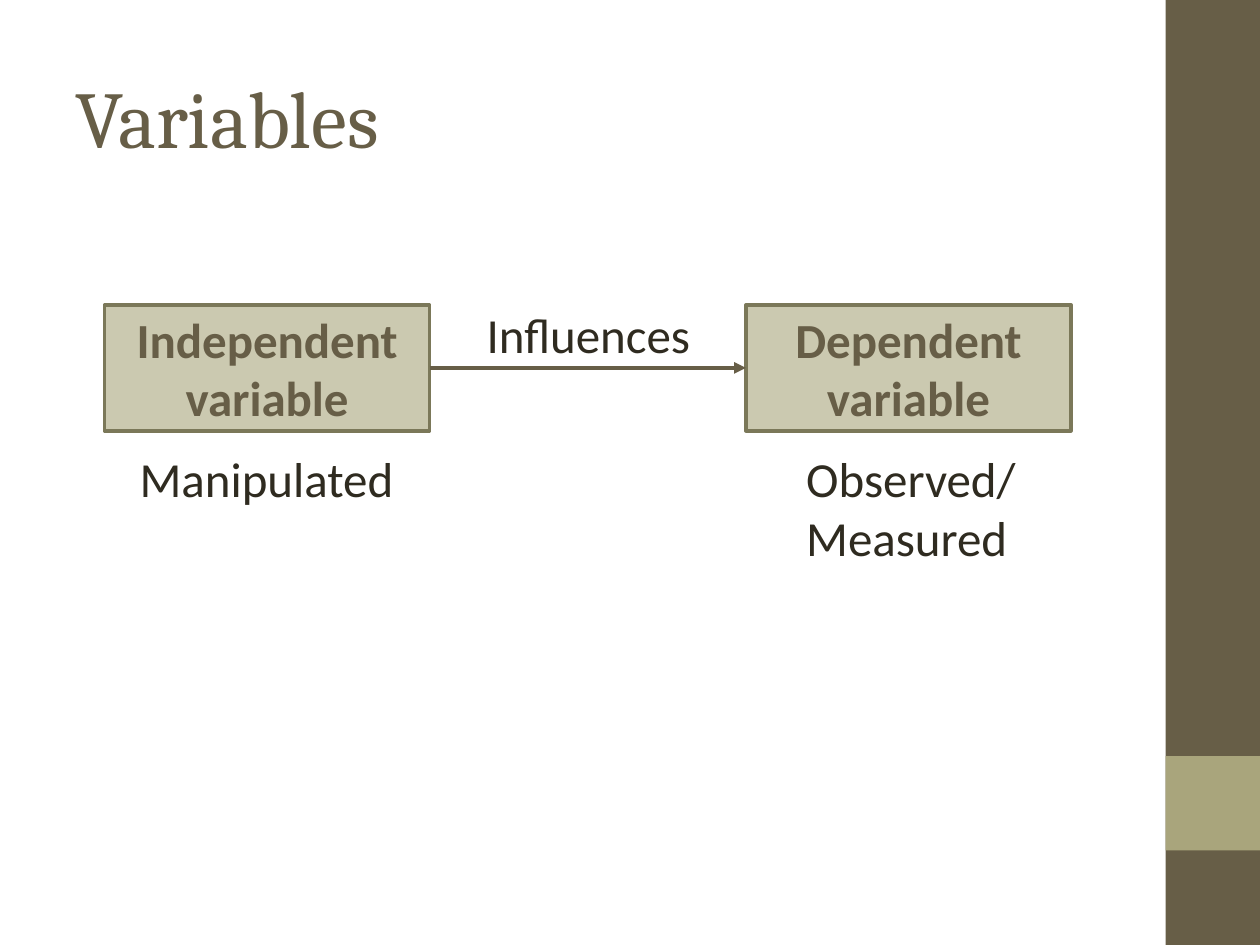
from pptx import Presentation
from pptx.dml.color import RGBColor
from pptx.enum.shapes import MSO_CONNECTOR, MSO_SHAPE
from pptx.enum.text import MSO_ANCHOR, PP_ALIGN
from pptx.oxml.ns import qn
from pptx.util import Inches, Pt
from lxml import etree

RECTANGLE = MSO_SHAPE.RECTANGLE
STRAIGHT = MSO_CONNECTOR.STRAIGHT
MIDDLE, TOP = MSO_ANCHOR.MIDDLE, MSO_ANCHOR.TOP
LEFT, CENTER = PP_ALIGN.LEFT, PP_ALIGN.CENTER

BROWN = RGBColor(0x67, 0x5E, 0x47)
OLIVE = RGBColor(0xA9, 0xA5, 0x7C)
BOX_FILL = RGBColor(0xCB, 0xC9, 0xB0)
BOX_LINE = RGBColor(0x7B, 0x78, 0x59)
INK = RGBColor(0x2F, 0x2B, 0x20)

HEADING_FONT, BODY_FONT = "Cambria", "Calibri"
BOX_TOP, BOX_WIDTH, BOX_HEIGHT = 2.42, 2.58, 1
CAPTION_TOP = 3.51
RIGHT_SIDE, LEFT_SIDE = 3, 1


def write_text(shape, lines, color, size=28, font=BODY_FONT, bold=False,
               align=LEFT, anchor=TOP):
    frame = shape.text_frame
    frame.word_wrap = True
    frame.vertical_anchor = anchor
    for index, line in enumerate(lines):
        para = frame.add_paragraph() if index else frame.paragraphs[0]
        para.alignment = align
        span = para.add_run()
        span.text = line
        span.font.size = Pt(size)
        span.font.name = font
        span.font.bold = bold
        span.font.color.rgb = color


def add_rectangle(page, left, top, width, height, fill):
    box = page.shapes.add_shape(RECTANGLE, Inches(left), Inches(top),
                                Inches(width), Inches(height))
    box.shadow.inherit = False
    box.fill.solid()
    box.fill.fore_color.rgb = fill
    box.line.fill.background()
    return box


def add_variable(page, left, name):
    box = add_rectangle(page, left, BOX_TOP, BOX_WIDTH, BOX_HEIGHT, BOX_FILL)
    box.line.color.rgb = BOX_LINE
    box.line.width = Pt(2)
    write_text(box, [name], BROWN, bold=True, align=CENTER, anchor=MIDDLE)
    return box


def add_label(page, left, top, width, height, lines, color=INK, **style):
    label = page.shapes.add_textbox(Inches(left), Inches(top),
                                    Inches(width), Inches(height))
    write_text(label, lines, color, **style)


def add_arrow(page, source, target):
    """Join the right side of source to the left side of target."""
    arrow = page.shapes.add_connector(STRAIGHT, 0, 0, 0, 0)
    arrow.begin_connect(source, RIGHT_SIDE)
    arrow.end_connect(target, LEFT_SIDE)
    arrow.line.color.rgb = BROWN
    arrow.line.width = Pt(2.25)
    etree.SubElement(arrow.line._get_or_add_ln(), qn("a:tailEnd"), type="triangle")
    etree.SubElement(arrow._element.spPr, qn("a:effectLst"))


def main():
    deck = Presentation()
    deck.slide_width, deck.slide_height = Inches(10), Inches(7.5)
    page = deck.slides.add_slide(deck.slide_layouts[6])

    add_rectangle(page, 9.25, 0, 0.75, 7.5, BROWN)
    add_rectangle(page, 9.25, 6, 0.75, 0.75, OLIVE)
    add_label(page, 0.5, 0.3, 8.33, 1.25, ["Variables"], BROWN,
              size=46, font=HEADING_FONT, anchor=MIDDLE)

    independent = add_variable(page, 0.83, "Independent variable")
    dependent = add_variable(page, 5.92, "Dependent variable")
    add_label(page, 1.01, CAPTION_TOP, 2.24, 0.57, ["Manipulated"])
    add_label(page, 6.3, CAPTION_TOP, 1.88, 1.04, ["Observed/", "Measured"])
    add_label(page, 3.75, 2.37, 1.84, 0.57, ["Influences"], align=CENTER)
    add_arrow(page, independent, dependent)

    deck.save("out.pptx")


if __name__ == "__main__":
    main()
